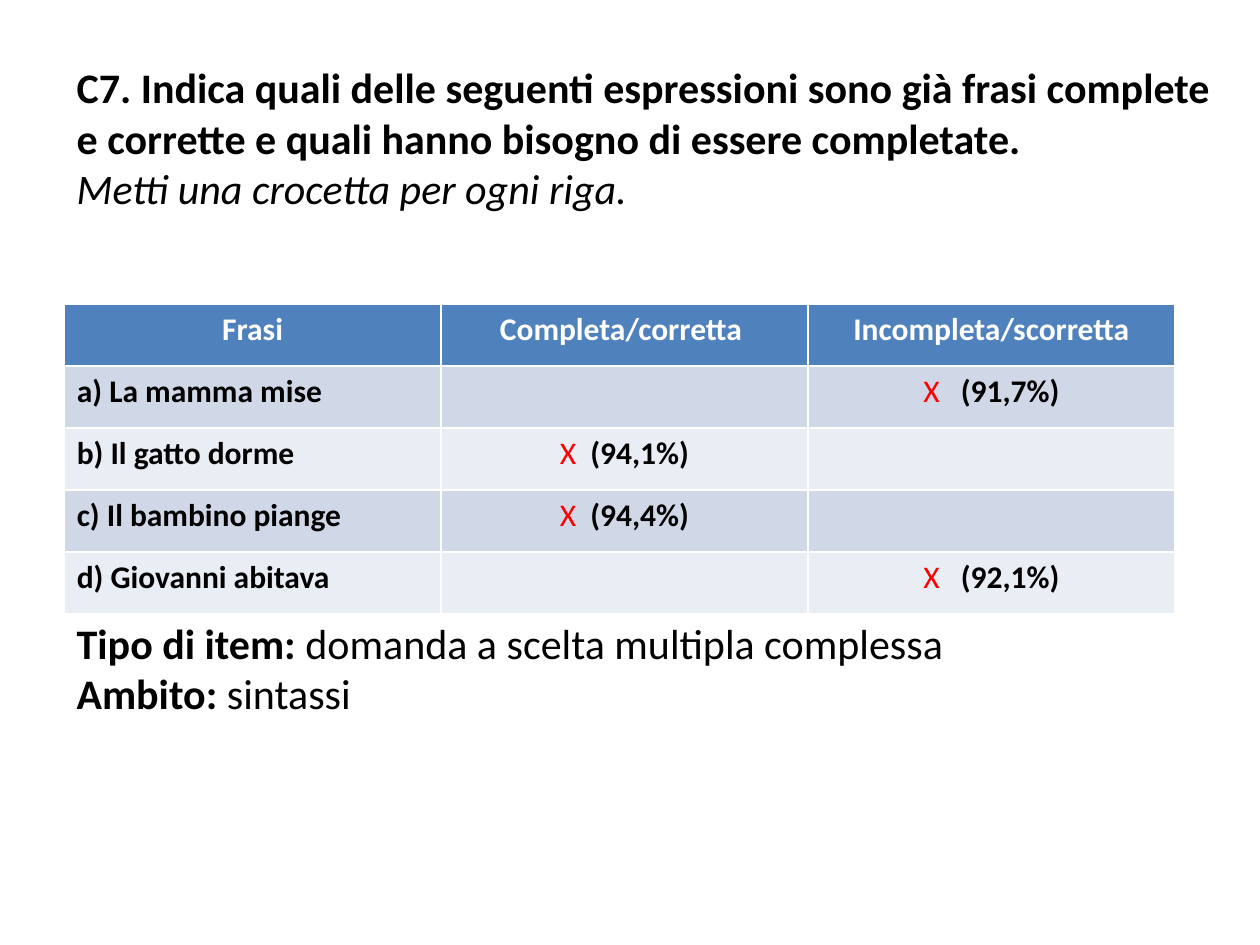
import pptx
import pptx.dml.color
import pptx.enum.text
import pptx.util

Pt = pptx.util.Pt
FONT = "Calibri"
BLACK, WHITE, RED = "000000", "FFFFFF", "FF0000"
HEADER_FILL = "4F81BD"
BAND_FILLS = ["D0D8E8", "E9EDF4"]

QUESTION = (
    "C7. Indica quali delle seguenti espressioni sono già frasi complete "
    "e corrette e quali hanno bisogno di essere completate."
)
INSTRUCTION = "Metti una crocetta per ogni riga."
DETAILS = [
    ("Tipo di item: ", "domanda a scelta multipla complessa"),
    ("Ambito: ", "sintassi"),
]
HEADERS = ["Frasi", "Completa/corretta ", "Incompleta/scorretta"]
ANSWERS = [
    ("a) La mamma mise", 2, "X   ", "(91,7%)"),
    ("b) Il gatto dorme", 1, "X  ", "(94,1%)"),
    ("c) Il bambino piange", 1, "X  ", "(94,4%)"),
    ("d) Giovanni abitava", 2, "X   ", "(92,1%)"),
]

LEFT = 36.72
TEXT_TOP, TEXT_WIDTH, TEXT_HEIGHT = 31.7, 663, 443.5
TABLE_TOP, ROW_HEIGHT = 173.9, 35.4
COLUMN_WIDTHS = [215.3, 209.7, 209.7]
TABLE_GAP = 231


def color(value):
    return pptx.dml.color.RGBColor.from_string(value)


def style(font, size, value=BLACK, bold=False, italic=False):
    font.name, font.size = FONT, Pt(size)
    font.bold, font.italic = bold, italic
    font.color.rgb = color(value)


def add_run(paragraph, text, size, value=BLACK, bold=False):
    run = paragraph.add_run()
    run.text = text
    style(run.font, size, value, bold)


def add_text(slide):
    box = slide.shapes.add_textbox(Pt(LEFT), Pt(TEXT_TOP), Pt(TEXT_WIDTH), Pt(TEXT_HEIGHT))
    frame = box.text_frame
    frame.word_wrap = True
    question = frame.paragraphs[0]
    question.text = QUESTION
    style(question.font, 24, bold=True)
    instruction = frame.add_paragraph()
    instruction.text = INSTRUCTION
    style(instruction.font, 24, italic=True)
    for index, (label, value) in enumerate(DETAILS):
        paragraph = frame.add_paragraph()
        paragraph.space_before = Pt(0 if index else TABLE_GAP)
        add_run(paragraph, label, 24, bold=True)
        add_run(paragraph, value, 24)


def add_answer_table(slide):
    row_count = len(ANSWERS) + 1
    table = slide.shapes.add_table(
        row_count, len(HEADERS), Pt(LEFT), Pt(TABLE_TOP),
        Pt(sum(COLUMN_WIDTHS)), Pt(ROW_HEIGHT * row_count),
    ).table
    for column, width in zip(table.columns, COLUMN_WIDTHS):
        column.width = Pt(width)
    for index, row in enumerate(table.rows):
        row.height = Pt(ROW_HEIGHT)
        fill = BAND_FILLS[(index - 1) % 2] if index else HEADER_FILL
        for cell in row.cells:
            cell.fill.solid()
            cell.fill.fore_color.rgb = color(fill)
            style(cell.text_frame.paragraphs[0].font, 18)

    def cell_paragraph(row, column, centered=True):
        paragraph = table.cell(row, column).text_frame.paragraphs[0]
        if centered:
            paragraph.alignment = pptx.enum.text.PP_ALIGN.CENTER
        return paragraph

    for column, header in enumerate(HEADERS):
        add_run(cell_paragraph(0, column), header, 18, WHITE, True)
    for row, (sentence, column, mark, share) in enumerate(ANSWERS, 1):
        add_run(cell_paragraph(row, 0, False), sentence, 18, bold=True)
        answer = cell_paragraph(row, column)
        add_run(answer, mark, 18, RED)
        add_run(answer, share, 18, bold=True)


def main():
    presentation = pptx.Presentation()
    presentation.slide_width, presentation.slide_height = Pt(720), Pt(540)
    slide = presentation.slides.add_slide(presentation.slide_layouts[6])
    add_text(slide)
    add_answer_table(slide)
    presentation.save("out.pptx")


if __name__ == "__main__":
    main()
